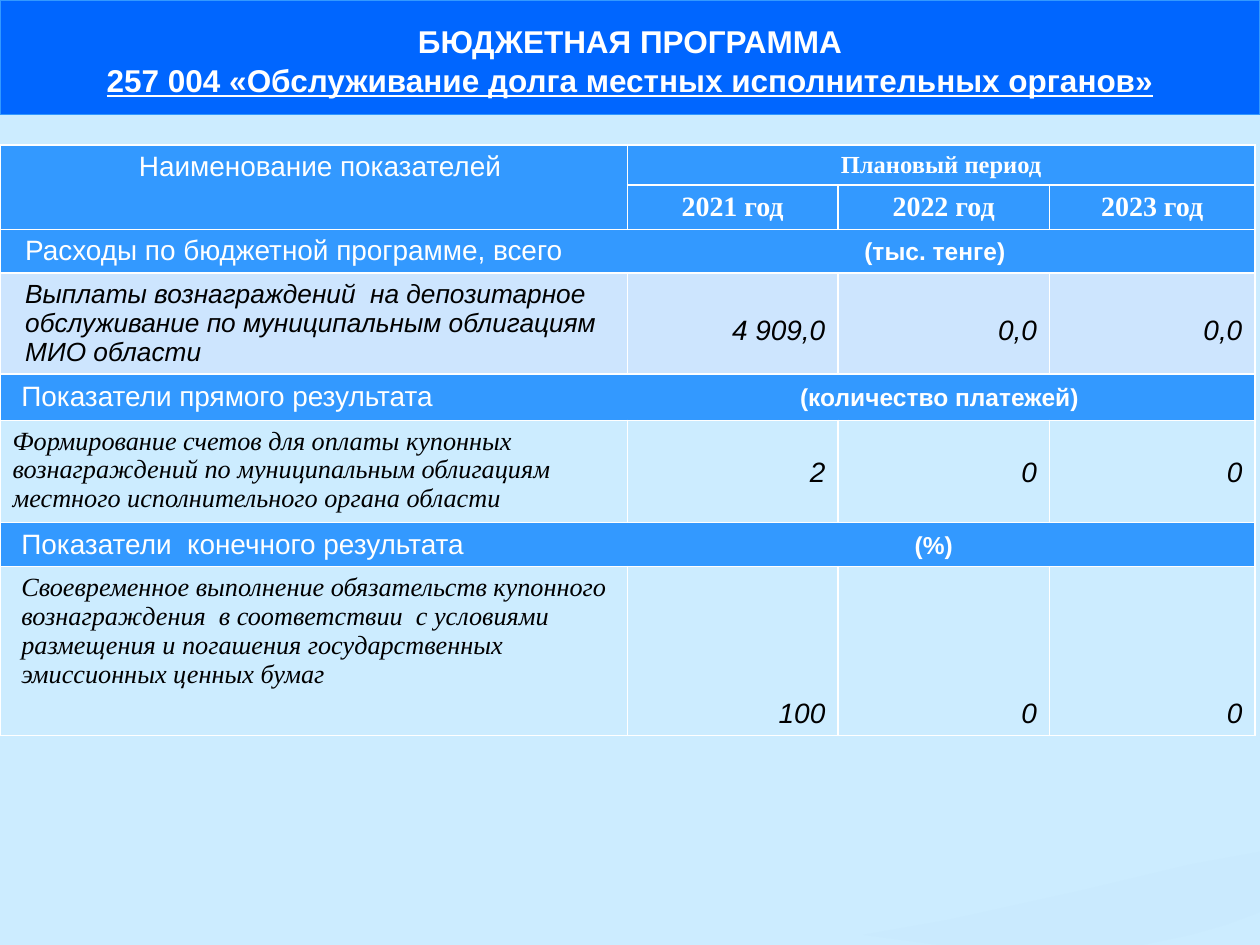
from dataclasses import dataclass
from lxml.etree import SubElement
from pptx import Presentation
from pptx.dml.color import RGBColor
from pptx.enum.shapes import MSO_SHAPE as Shape
from pptx.enum.text import MSO_ANCHOR as Anchor, PP_ALIGN as Align
from pptx.oxml.ns import qn
from pptx.util import Inches, Pt


@dataclass(frozen=True)
class Theme:
    page: str = "CCECFF"
    banner: str = "0066FF"
    header: str = "3399FF"
    tint: str = "CDE5FE"
    wave: str = "C6E7FC"
    light: str = "FFFFFF"
    dark: str = "000000"
    sans: str = "Arial"
    serif: str = "Times New Roman"
    title: int = 18
    body: int = 16
    label: int = 15
    unit: int = 14


THEME = Theme()


def color(code):
    return RGBColor.from_string(code)


def add_text(para, text, size=THEME.body, font=THEME.sans, ink=THEME.light,
             bold=False, italic=False, underline=False):
    span = para.add_run()
    span.text = text
    span.font.size = Pt(size)
    span.font.name = font
    span.font.color.rgb = color(ink)
    span.font.bold = bold
    span.font.italic = italic
    span.font.underline = underline


class Page:
    def __init__(self, deck, theme):
        self.theme = theme
        self.slide = deck.slides.add_slide(deck.slide_layouts[6])
        fill = self.slide.background.fill
        fill.solid()
        fill.fore_color.rgb = color(theme.page)

    def wave(self, points, alpha):
        corners = [(Inches(x), Inches(y)) for x, y in points]
        builder = self.slide.shapes.build_freeform(*corners[0])
        builder.add_line_segments(corners[1:], close=True)
        shape = builder.convert_to_shape()
        shape.shadow.inherit = False
        shape.line.fill.background()
        shape.fill.solid()
        shape.fill.fore_color.rgb = color(self.theme.wave)
        tone = shape.fill._xPr.find(qn("a:solidFill"))[0]
        SubElement(tone, qn("a:alpha"), val=str(alpha * 1000))

    def banner(self, width, height, lines):
        box = self.slide.shapes.add_shape(Shape.RECTANGLE, 0, 0, Inches(width), Inches(height))
        box.shadow.inherit = False
        box.fill.solid()
        box.fill.fore_color.rgb = color(self.theme.banner)
        box.line.color.rgb = color(self.theme.header)
        box.line.width = Pt(0.75)
        frame = box.text_frame
        frame.word_wrap = True
        frame.vertical_anchor = Anchor.MIDDLE
        frame.margin_top = Inches(0.1)
        for index, (text, underline) in enumerate(lines):
            para = frame.add_paragraph() if index else frame.paragraphs[0]
            para.alignment = Align.CENTER
            para.space_before = Pt(index / 2)
            add_text(para, text, size=self.theme.title, bold=True, underline=underline)

    def table(self, left, top, columns, rows):
        frame = self.slide.shapes.add_table(
            len(rows), len(columns), Inches(left), Inches(top),
            Inches(sum(columns)), Inches(sum(rows)))
        grid = frame.table
        grid.first_row = grid.horz_banding = False
        for column, width in zip(grid.columns, columns):
            column.width = Inches(width)
        for row, height in zip(grid.rows, rows):
            row.height = Inches(height)
        for cell in grid.iter_cells():
            self.border(cell)
        return grid

    def border(self, cell):
        properties = cell._tc.get_or_add_tcPr()
        for side in "LRTB":
            line = SubElement(properties, qn(f"a:ln{side}"), w=str(Pt(1)))
            fill = SubElement(line, qn("a:solidFill"))
            SubElement(fill, qn("a:srgbClr"), val=self.theme.light)

    def cell(self, cell, text, fill=None, align=Align.LEFT, anchor=Anchor.MIDDLE,
             inset=0.1, top=0.05, **style):
        if fill:
            cell.fill.solid()
            cell.fill.fore_color.rgb = color(fill)
        else:
            cell.fill.background()
        cell.vertical_anchor = anchor
        cell.margin_left = Inches(inset)
        cell.margin_top = Inches(top)
        para = cell.text_frame.paragraphs[0]
        para.alignment = align
        add_text(para, text, **style)
        return para

    def section(self, grid, row, text, unit, inset, unit_left):
        first = grid.cell(row, 0)
        first.merge(grid.cell(row, len(grid.columns) - 1))
        para = self.cell(first, text + "\t", self.theme.header, inset=inset)
        stops = SubElement(para._p.get_or_add_pPr(), qn("a:tabLst"))
        SubElement(stops, qn("a:tab"), pos=str(Inches(unit_left - inset)), algn="l")
        add_text(para, unit, size=self.theme.unit, bold=True)

    def indicator(self, grid, row, text, values, font, inset, fill=None,
                  anchor=Anchor.MIDDLE, top=0.05):
        style = dict(ink=self.theme.dark, italic=True)
        self.cell(grid.cell(row, 0), text, fill, anchor=Anchor.TOP, inset=inset,
                  size=self.theme.label, font=font, **style)
        for column, value in enumerate(values, 1):
            self.cell(grid.cell(row, column), value, fill, Align.RIGHT, anchor, top=top, **style)


def main():
    deck = Presentation()
    deck.slide_width, deck.slide_height = Inches(10), Inches(7.5)
    page = Page(deck, THEME)
    page.wave([(10, 6.76), (9.45, 6.86), (8.57, 7.07), (7.53, 7.3), (6.85, 7.42),
               (7.45, 7.5), (9.07, 7.5), (9.45, 7.42), (9.73, 7.34), (10, 7.24)], alpha=30)
    page.banner(10, 0.91, [
        ("БЮДЖЕТНАЯ ПРОГРАММА", False),
        ("257 004 «Обслуживание долга местных исполнительных органов»", True)])

    grid = page.table(0, 1.15, [4.98, 1.67, 1.68, 1.63],
                      [0.32, 0.35, 0.34, 0.8, 0.37, 0.81, 0.35, 1.34])
    grid.cell(0, 0).merge(grid.cell(1, 0))
    grid.cell(0, 1).merge(grid.cell(0, 3))
    page.cell(grid.cell(0, 0), "Наименование показателей", THEME.header,
              Align.CENTER, Anchor.TOP, inset=0.2)
    heading = dict(fill=THEME.header, align=Align.CENTER, font=THEME.serif, bold=True)
    page.cell(grid.cell(0, 1), "Плановый период", size=THEME.unit, **heading)
    for column, year in enumerate(range(2021, 2024), 1):
        page.cell(grid.cell(1, column), f"{year} год", **heading)

    for row, text, unit, inset, unit_left in [
            (2, "Расходы по бюджетной программе, всего", "(тыс. тенге)", 0.2, 6.86),
            (4, "Показатели прямого результата", "(количество платежей)", 0.17, 6.35),
            (6, "Показатели  конечного результата", "(%)", 0.17, 7.26)]:
        page.section(grid, row, text, unit, inset, unit_left)

    page.indicator(
        grid, 3, "Выплаты вознаграждений  на депозитарное обслуживание "
        "по муниципальным облигациям МИО области",
        ["4 909,0", "0,0", "0,0"], THEME.sans, 0.2, fill=THEME.tint, top=0.16)
    page.indicator(
        grid, 5, "Формирование счетов для оплаты купонных вознаграждений "
        "по муниципальным облигациям местного исполнительного органа области",
        ["2", "0", "0"], THEME.serif, 0.1, top=0.08)
    page.indicator(
        grid, 7, "Своевременное выполнение обязательств купонного вознаграждения  "
        "в соответствии  с условиями размещения и погашения государственных "
        "эмиссионных ценных бумаг",
        ["100", "0", "0"], THEME.serif, 0.17, anchor=Anchor.BOTTOM)
    deck.save("out.pptx")


if __name__ == "__main__":
    main()
